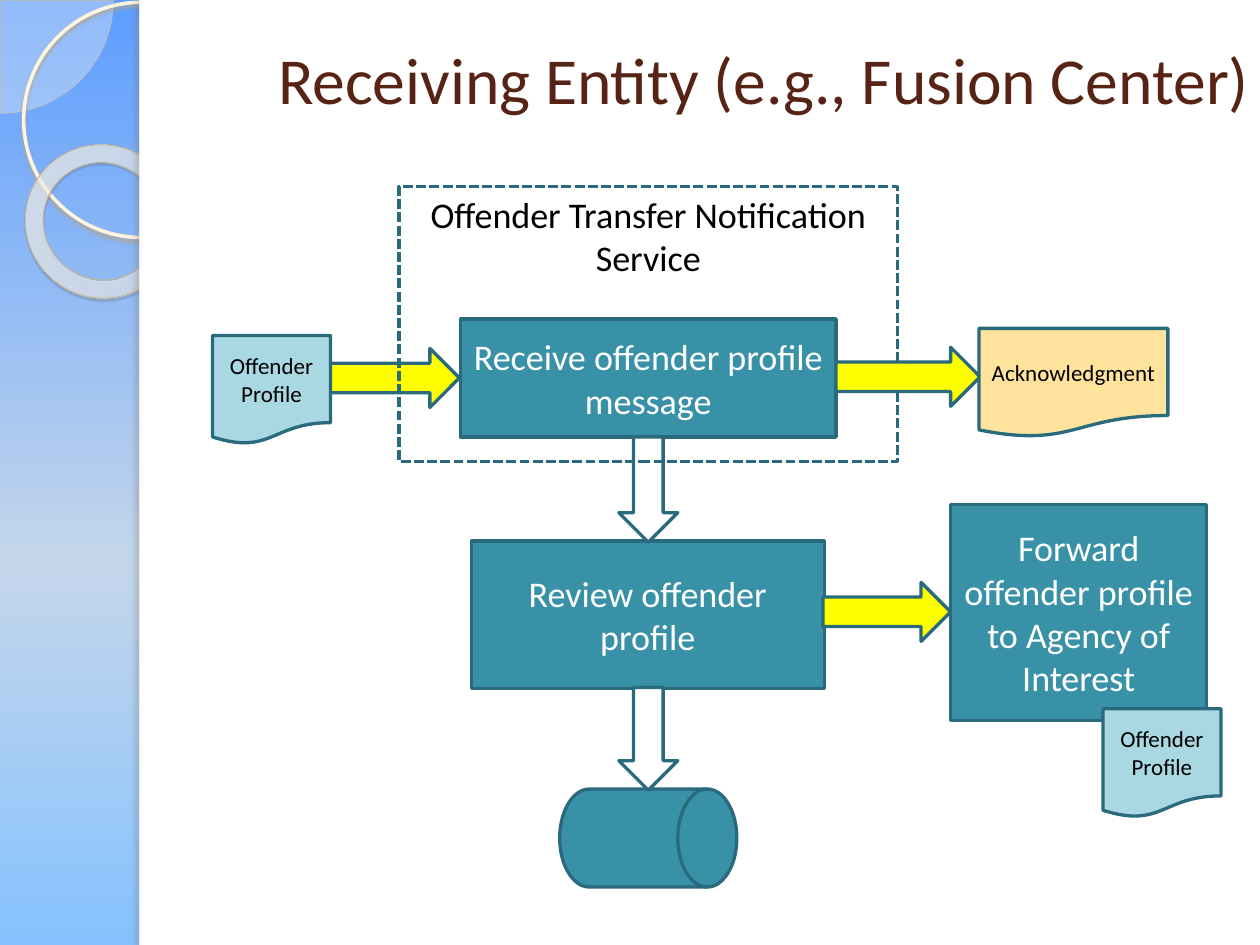
from lxml import etree
from pptx import Presentation
from pptx.dml.color import RGBColor
from pptx.enum import dml, shapes, text
from pptx.oxml.ns import qn
from pptx.util import Inches, Pt

KIND = shapes.MSO_SHAPE
FONT = "Calibri"
TEAL, EDGE, YELLOW, WHITE, BLACK = "3891A7", "296B7C", "FFFF00", "FFFFFF", "000000"
PALE_BLUE, SAND = "A9D7E2", "FFE39D"
ARROW_WIDTH = 0.5


def rgb(value):
    return RGBColor.from_string(value)


def add_color(parent, value, opacity=100):
    color = etree.SubElement(parent, qn("a:srgbClr"), val=value)
    if opacity < 100:
        etree.SubElement(color, qn("a:alpha"), val=str(opacity * 1000))


def set_stops(gradient, stops):
    stop_list = gradient.find(qn("a:gsLst"))
    for old in list(stop_list):
        stop_list.remove(old)
    for position, value, opacity in stops:
        stop = etree.SubElement(stop_list, qn("a:gs"), pos=str(position * 1000))
        add_color(stop, value, opacity)


def add_shadow(shape, value, opacity, blur, distance, angle):
    effects = shape._element.spPr.find(qn("a:effectLst"))
    shadow = etree.SubElement(
        effects, qn("a:outerShdw"), blurRad=str(Pt(blur)), dist=str(Pt(distance)),
        dir=str(angle * 60000), algn="tl", rotWithShape="0")
    add_color(shadow, value, opacity)


def add_box(slide, kind, box, fill=None, line=None, width=2):
    shape = slide.shapes.add_shape(kind, *(Inches(v) for v in box))
    shape.shadow.inherit = False
    if fill:
        shape.fill.solid()
        shape.fill.fore_color.rgb = rgb(fill)
    else:
        shape.fill.background()
    if line:
        shape.line.color.rgb = rgb(line)
        shape.line.width = Pt(width)
    else:
        shape.line.fill.background()
    return shape


def write(shape, words, size, color, align=text.PP_ALIGN.CENTER,
          anchor=text.MSO_ANCHOR.MIDDLE):
    frame = shape.text_frame
    frame.text = words
    frame.word_wrap = True
    frame.vertical_anchor = anchor
    paragraph = frame.paragraphs[0]
    paragraph.alignment = align
    for name, value in {"name": FONT, "size": Pt(size)}.items():
        setattr(paragraph.font, name, value)
    paragraph.font.color.rgb = rgb(color)


def add_process(slide, box, words):
    write(add_box(slide, KIND.FLOWCHART_PROCESS, box, TEAL, EDGE), words, 22, WHITE)


def add_document(slide, left, top, words, width=1, fill=PALE_BLUE):
    page = add_box(slide, KIND.FLOWCHART_DOCUMENT, (left, top, width, 0.92), fill, EDGE)
    write(page, words, 14, BLACK)


def add_arrow(slide, x, y, length, down=False):
    """Block arrow whose tail is centred on (x, y)."""
    left = x - length / 2 if down else x
    top = y + length / 2 if down else y
    arrow = add_box(slide, KIND.RIGHT_ARROW,
                    (left, top - ARROW_WIDTH / 2, length, ARROW_WIDTH),
                    WHITE if down else YELLOW, EDGE)
    arrow.rotation = 90 if down else 0


def add_backdrop(slide, width, height, band):
    # Sky gradient
    sky = slide.background.fill
    sky.gradient()
    sky.gradient_angle = 270
    set_stops(slide.element.find(".//" + qn("a:gradFill")),
              [(0, "5E9EFF", 100), (60, "C4D6EB", 100), (100, "85C2FF", 100)])

    # Quarter disc in the corner
    corner = add_box(slide, KIND.PIE, (-0.95, -0.95, 1.91, 1.91), "FEFAF4", "D3C39F", 0.25)
    corner.adjustments[0], corner.adjustments[1] = 0, 54
    add_color_to = corner._element.spPr.find(qn("a:solidFill")).find(qn("a:srgbClr"))
    etree.SubElement(add_color_to, qn("a:alpha"), val="33000")

    # Large ring
    ring = add_box(slide, KIND.OVAL, (0.2, 0.02, 1.99, 1.99), None, "FFF5DE", 2.15)
    add_shadow(ring, "B0A68F", 85, 2, 2, 90)

    # Translucent donut
    donut = add_box(slide, KIND.DONUT, (0.21, 1.23, 1.31, 1.29), None, "C7B893", 0.58)
    donut.adjustments[0] = 0.118
    donut.rotation = 38.6
    donut.fill.gradient()
    gradient = donut._element.spPr.find(qn("a:gradFill"))
    set_stops(gradient, [(0, "FFFCF6", 70), (70, "FFFEFB", 55), (100, "F0D28E", 60)])
    gradient.remove(gradient.find(qn("a:lin")))
    radial = etree.SubElement(gradient, qn("a:path"), path="circle")
    etree.SubElement(radial, qn("a:fillToRect"), l="-408000", t="-50000",
                     r="508000", b="150000")
    add_shadow(donut, "5A5444", 35, 1, 1.2, 75)

    # White page and its shaded edge
    add_box(slide, KIND.RECTANGLE, (band, 0, width - band, height), WHITE)
    edge = add_box(slide, KIND.RECTANGLE, (band, 0, 0.09, height), WHITE)
    add_shadow(edge, "736F63", 25, 3, 3, 180)


def add_title(slide, box, words):
    title = slide.shapes.title
    for name, value in zip(("left", "top", "width", "height"), box):
        setattr(title, name, Inches(value))
    write(title, words, 40, "572314", text.PP_ALIGN.RIGHT)
    slide.shapes._spTree.append(title._element)  # in front of the white page


def add_flow(slide, left, top):
    """Flow diagram; left and top are the corner of the service frame."""
    axis = left + 2.11

    # Receive, review, store
    add_process(slide, (axis - 1.59, top + 1.12, 3.18, 1), "Receive offender profile message")
    add_arrow(slide, left - 1.08, top + 1.62, 1.59)
    add_process(slide, (axis - 1.5, top + 3, 2.99, 1.25), "Review offender profile")
    add_arrow(slide, axis, top + 2.12, 0.89, down=True)
    add_arrow(slide, left + 3.59, top + 3.6, 1.08)
    add_box(slide, KIND.FLOWCHART_DIRECT_ACCESS_STORAGE,
            (axis - 0.75, top + 5.1, 1.5, 0.83), TEAL, EDGE)
    add_arrow(slide, axis, top + 4.24, 0.87, down=True)

    # Forward
    add_process(slide, (left + 4.67, top + 2.69, 2.17, 1.83),
                "Forward offender profile to Agency of Interest")

    # Service frame
    service = add_box(slide, KIND.RECTANGLE, (left, top, 4.22, 2.33), None, EDGE)
    service.line.dash_style = dml.MSO_LINE.SQUARE_DOT
    write(service, "Offender Transfer Notification Service", 22, BLACK,
          anchor=text.MSO_ANCHOR.TOP)

    # Documents in and out
    add_document(slide, left - 1.58, top + 1.26, "Offender Profile")
    add_document(slide, left + 5.96, top + 4.42, "Offender Profile")
    add_arrow(slide, left + 3.7, top + 1.61, 1.22)
    add_document(slide, left + 4.91, top + 1.2, "Acknowledgment", 1.6, SAND)


def main():
    deck = Presentation()
    width, height = 10.67, 8
    deck.slide_width, deck.slide_height = Inches(width), Inches(height)
    slide = deck.slides.add_slide(deck.slide_layouts[5])
    add_backdrop(slide, width, height, 1.18)
    add_title(slide, (2.06, 0, 8.62, 1.33), "Receiving Entity (e.g., Fusion Center)")
    add_flow(slide, 3.38, 1.58)
    deck.save("out.pptx")


if __name__ == "__main__":
    main()
